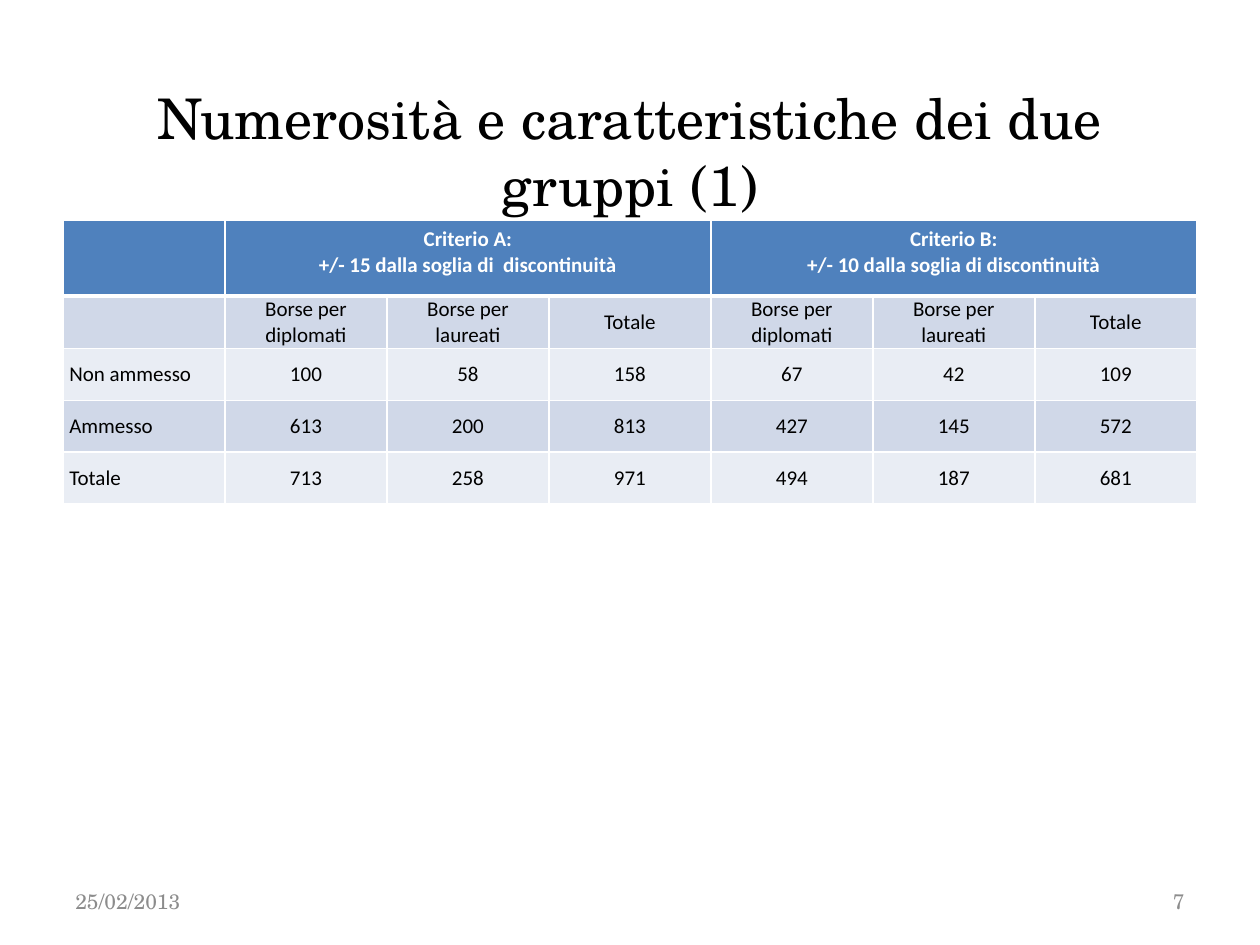
from lxml import etree
from pptx import Presentation
from pptx.dml.color import RGBColor
from pptx.enum import text
from pptx.oxml import ns
from pptx.util import Inches, Pt

BLACK = RGBColor(0x00, 0x00, 0x00)
WHITE = RGBColor(0xFF, 0xFF, 0xFF)
GREY = RGBColor(0x8C, 0x8C, 0x8C)
HEADER_BLUE = RGBColor(0x4F, 0x81, 0xBD)
BANDS = (RGBColor(0xD0, 0xD8, 0xE8), RGBColor(0xE9, 0xED, 0xF4))

SERIF = "TeX Gyre Schola"
SANS = "Calibri"
ALIGN = text.PP_ALIGN

CRITERIA = {
    1: "Criterio A:\n+/- 15 dalla soglia di  discontinuità",
    4: "Criterio B:\n+/- 10 dalla soglia di discontinuità",
}
GROUPS = ["Borse per\ndiplomati", "Borse per\nlaureati", "Totale"]
BODY = [
    ["", *GROUPS, *GROUPS],
    ["Non ammesso", 100, 58, 158, 67, 42, 109],
    ["Ammesso", 613, 200, 813, 427, 145, 572],
    ["Totale", 713, 258, 971, 494, 187, 681],
]


def style_paragraph(paragraph, font_name, size, color, align, bold=False):
    paragraph.alignment = align
    font = paragraph.font
    font.name, font.size, font.bold = font_name, Pt(size), bold
    font.color.rgb = color


def add_label(slide, words, left, top, width, height, size, color, align):
    frame = slide.shapes.add_textbox(
        Inches(left), Inches(top), Inches(width), Inches(height)).text_frame
    frame.word_wrap = True
    frame.vertical_anchor = text.MSO_ANCHOR.MIDDLE
    frame.text = words
    style_paragraph(frame.paragraphs[0], SERIF, size, color, align)


def set_borders(cell, top, bottom):
    """Draw white cell borders; top and bottom are widths in points."""
    properties = cell._tc.get_or_add_tcPr()
    for side, width in (("L", 1), ("R", 1), ("T", top), ("B", bottom)):
        line = etree.SubElement(properties, ns.qn(f"a:ln{side}"), w=str(Pt(width)))
        fill = etree.SubElement(line, ns.qn("a:solidFill"))
        etree.SubElement(fill, ns.qn("a:srgbClr"), val=str(WHITE))


def fill_cell(cell, color):
    cell.fill.solid()
    cell.fill.fore_color.rgb = color


def fill_header(table):
    for column, cell in enumerate(table.rows[0].cells):
        set_borders(cell, 1, 3)
        fill_cell(cell, HEADER_BLUE)
        cell.text = CRITERIA.get(column, "")
        for paragraph in cell.text_frame.paragraphs:
            style_paragraph(paragraph, SANS, 12, WHITE, ALIGN.CENTER, bold=True)
    for column in CRITERIA:
        table.cell(0, column).merge(table.cell(0, column + len(GROUPS) - 1))


def fill_body(table):
    for row, values in enumerate(BODY, start=1):
        for column, value in enumerate(values):
            cell = table.cell(row, column)
            set_borders(cell, 3 if row == 1 else 1, 1)
            fill_cell(cell, BANDS[(row - 1) % 2])
            cell.vertical_anchor = text.MSO_ANCHOR.MIDDLE
            cell.margin_left = cell.margin_right = Inches(0.05)
            cell.margin_top = cell.margin_bottom = 0
            cell.text = str(value)
            align = ALIGN.CENTER if column else ALIGN.LEFT
            for paragraph in cell.text_frame.paragraphs:
                style_paragraph(paragraph, SANS, 12, BLACK, align)
                paragraph.line_spacing = Pt(15)


def add_counts_table(slide):
    table = slide.shapes.add_table(
        len(BODY) + 1, len(BODY[0]),
        Inches(0.5), Inches(1.75), Inches(9), Inches(2.24)).table
    for index, row in enumerate(table.rows):
        row.height = Inches(0.41 if index else 0.6)
    fill_header(table)
    fill_body(table)


def main():
    presentation = Presentation()
    presentation.slide_width, presentation.slide_height = Inches(10), Inches(7.5)
    slide = presentation.slides.add_slide(presentation.slide_layouts[6])
    add_label(slide, "Numerosità e caratteristiche dei due gruppi (1)",
              0.5, 0.77, 9, 0.85, 32, BLACK, ALIGN.CENTER)
    add_counts_table(slide)
    add_label(slide, "25/02/2013", 0.5, 6.95, 2.33, 0.4, 12, GREY, ALIGN.LEFT)
    add_label(slide, "7", 7.17, 6.95, 2.33, 0.4, 12, GREY, ALIGN.RIGHT)
    presentation.save("out.pptx")


if __name__ == "__main__":
    main()
